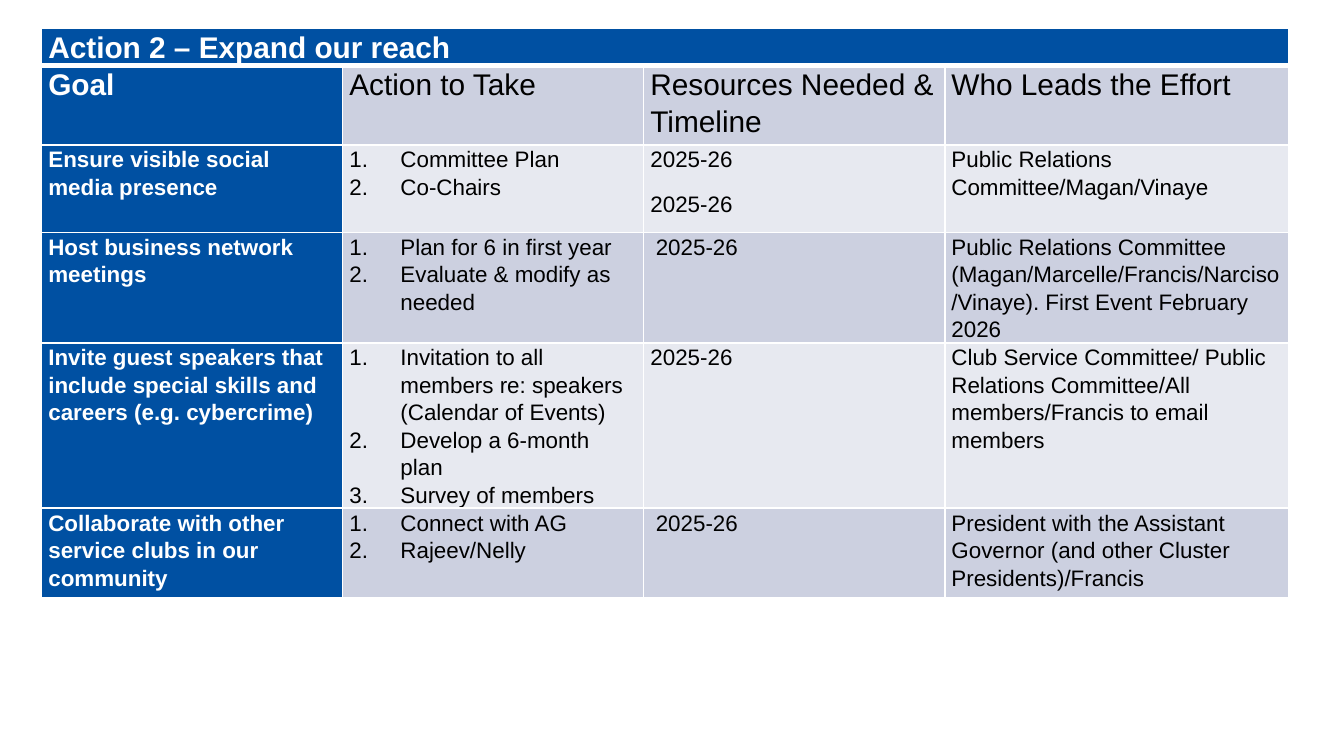
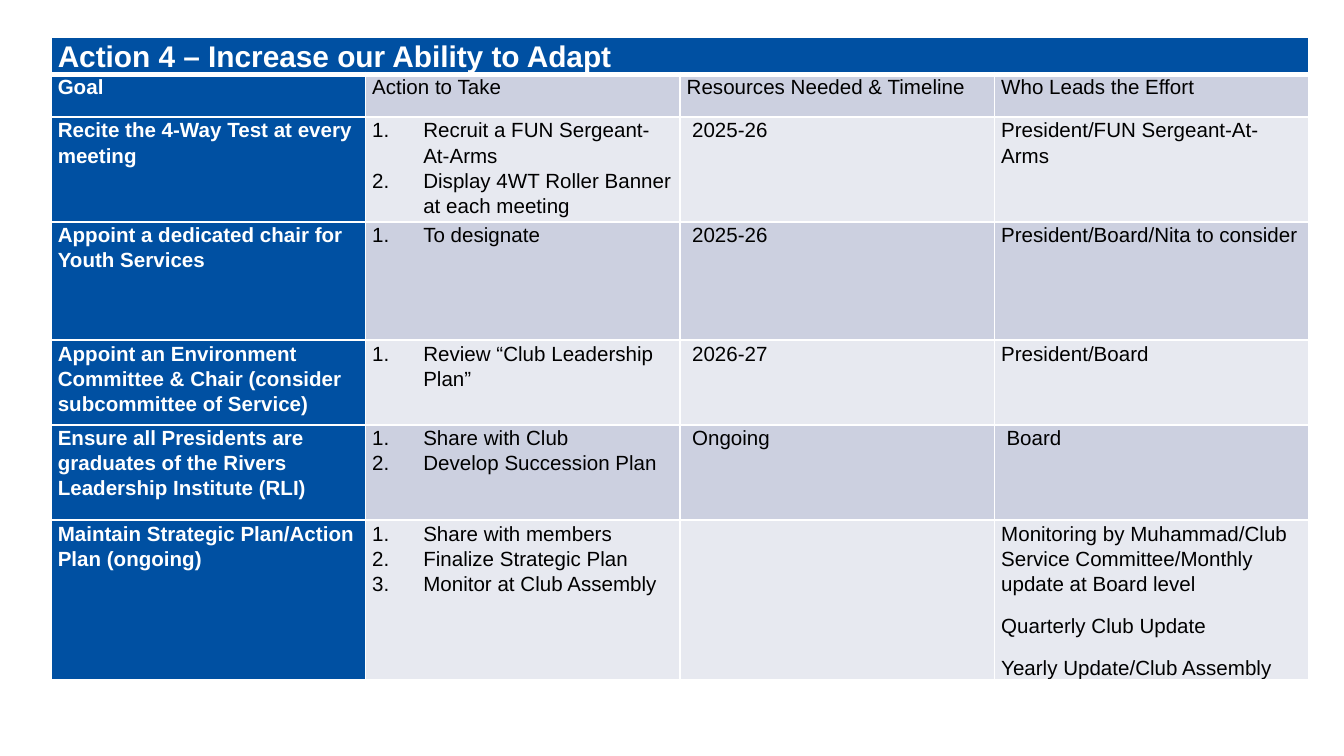
from lxml import etree
from pptx import Presentation
from pptx.dml.color import RGBColor
from pptx.oxml.ns import qn
from pptx.util import Inches, Pt

BLUE, WHITE, BLACK = "0050A2", "FFFFFF", "000000"
BANDS = ("CCD0E0", "E7E9F0")
FONT = "Arial"
HEADS = ("Goal", "Action to Take", "Resources Needed & Timeline",
         "Who Leads the Effort")
HANG, NUDGE = 0.38, 0.04
WIDE = 10
HIGH = WIDE * 9 / 16


def color(code):
    """Turn a hex string into a colour."""
    return RGBColor.from_string(code)


def plain(*lines):
    """Describe ordinary paragraphs."""
    return [(line, 0, False) for line in lines]


def nudge(line):
    """Describe a paragraph set slightly in from the left."""
    return [(line, NUDGE, False)]


def steps(*lines):
    """Describe a numbered list."""
    return [(line, HANG, True) for line in lines]


def write(para, text, size=12, ink=BLACK, bold=False, indent=0, number=False):
    """Fill a paragraph with formatted text."""
    props = para._p.get_or_add_pPr()
    if indent:
        props.set("marL", str(Inches(indent)))
    if number:
        props.set("indent", str(-Inches(indent)))
        etree.SubElement(props, qn("a:buFont"), typeface="+mj-lt")
        etree.SubElement(props, qn("a:buAutoNum"), type="arabicPeriod")
    para.line_spacing = 1.1
    para.space_after = Pt(0 if number else 9)
    run = para.add_run()
    run.text = text
    font = run.font
    font.name, font.size, font.bold = FONT, Pt(size), bold
    font.color.rgb = color(ink)


def border(cell, top=1, bottom=1):
    """Draw white borders round a cell, with widths in points."""
    props = cell._tc.get_or_add_tcPr()
    sides = (("L", 1), ("R", 1), ("T", top), ("B", bottom))
    for spot, (side, width) in enumerate(sides):
        line = etree.Element(qn(f"a:ln{side}"), w=str(Pt(width)))
        fill = etree.SubElement(line, qn("a:solidFill"))
        etree.SubElement(fill, qn("a:srgbClr"), val=WHITE)
        props.insert(spot, line)


def paint(cell, fill, items, top=1, bottom=1, **style):
    """Set the fill, margins, borders and text of a cell."""
    cell.fill.solid()
    cell.fill.fore_color.rgb = color(fill)
    cell.margin_left = cell.margin_right = Inches(0.05)
    cell.margin_top = cell.margin_bottom = 0
    border(cell, top, bottom)
    frame = cell.text_frame
    for spot, (text, indent, number) in enumerate(items):
        para = frame.add_paragraph() if spot else frame.paragraphs[0]
        write(para, text, indent=indent, number=number, **style)


def add_plan(deck, title, goals, left, top, widths, heights, head, body):
    """Add a slide with the action plan table."""
    slide = deck.slides.add_slide(deck.slide_layouts[6])
    rows = [[plain(text) for text in HEADS]]
    rows += [[plain(goal), *cells] for goal, *cells in goals]
    table = slide.shapes.add_table(
        len(heights), len(widths), Inches(left), Inches(top),
        Inches(sum(widths)), Inches(sum(heights))).table
    table.first_row = table.horz_banding = False
    for col, width in zip(table.columns, widths):
        col.width = Inches(width)
    for row, height in zip(table.rows, heights):
        row.height = Inches(height)

    for c in range(len(widths)):
        items = [] if c else plain(title)
        paint(table.cell(0, c), BLUE, items, bottom=3,
              size=16, ink=WHITE, bold=True)
    table.cell(0, 0).merge(table.cell(0, len(widths) - 1))

    for r, cells in enumerate(rows):
        for c, items in enumerate(cells):
            goal = c == 0
            paint(table.cell(r + 1, c), BLUE if goal else BANDS[r % 2], items,
                  top=1 if r else 3, size=body if r else head,
                  ink=WHITE if goal else BLACK, bold=goal)


REACH = (
    ("Ensure visible social media presence",
     steps("Committee Plan", "Co-Chairs"),
     plain("2025-26", "2025-26"),
     plain("Public Relations Committee/Magan/Vinaye")),
    ("Host business network meetings",
     steps("Plan for 6 in first year", "Evaluate & modify as needed"),
     nudge("2025-26"),
     plain("Public Relations Committee (Magan/Marcelle/Francis/Narciso"
           "/Vinaye). First Event February 2026")),
    ("Invite guest speakers that include special skills and careers "
     "(e.g. cybercrime)",
     steps("Invitation to all members re: speakers (Calendar of Events)",
           "Develop a 6-month plan", "Survey of members"),
     plain("2025-26"),
     plain("Club Service Committee/ Public Relations Committee/All "
           "members/Francis to email members")),
    ("Collaborate with other service clubs in our community",
     steps("Connect with AG", "Rajeev/Nelly"),
     nudge("2025-26"),
     plain("President with the Assistant Governor (and other Cluster "
           "Presidents)/Francis")),
)

ADAPT = (
    ("Recite the 4-Way Test at every meeting",
     steps("Recruit a FUN Sergeant-At-Arms",
           "Display 4WT Roller Banner at each meeting"),
     nudge("2025-26"),
     plain("President/FUN Sergeant-At-Arms")),
    ("Appoint a dedicated chair for Youth Services",
     steps("To designate"),
     nudge("2025-26"),
     plain("President/Board/Nita to consider")),
    ("Appoint an Environment Committee & Chair (consider subcommittee "
     "of Service)",
     steps("Review “Club Leadership Plan”"),
     nudge("2026-27"),
     plain("President/Board")),
    ("Ensure all Presidents are graduates of the Rivers Leadership "
     "Institute (RLI)",
     steps("Share with Club", "Develop Succession Plan"),
     nudge("Ongoing"),
     nudge("Board")),
    ("Maintain Strategic Plan/Action Plan (ongoing)",
     steps("Share with members", "Finalize Strategic Plan",
           "Monitor at Club Assembly"),
     plain(),
     plain("Monitoring by Muhammad/Club Service Committee/Monthly update "
           "at Board level", "Quarterly Club Update",
           "Yearly Update/Club Assembly")),
)


def main():
    """Build and save the deck."""
    deck = Presentation()
    deck.slide_width, deck.slide_height = Inches(WIDE), Inches(HIGH)
    add_plan(deck, "Action 2 – Expand our reach", REACH, 0.31, 0.21,
             [2.24] * 3 + [2.56], [0.28, 0.59, 0.65, 0.82, 1.23, 0.67],
             head=16, body=12)
    add_plan(deck, "Action 4 – Increase our Ability to Adapt", ADAPT,
             0.38, 0.28, [2.34] * 4,
             [0.25, 0.32, 0.78, 0.88, 0.63, 0.71, 1.18], head=11, body=11)
    deck.save("out.pptx")


if __name__ == "__main__":
    main()
